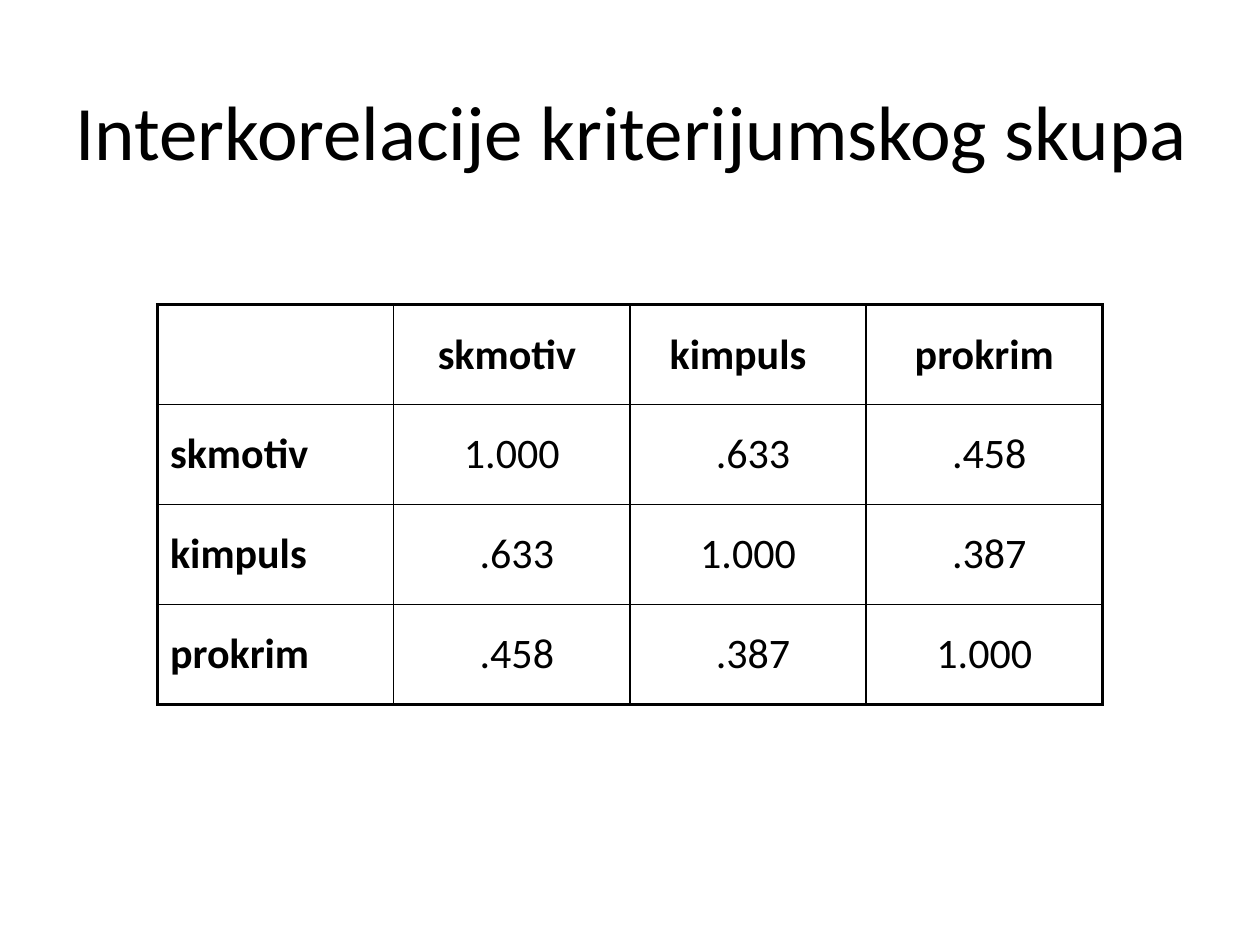
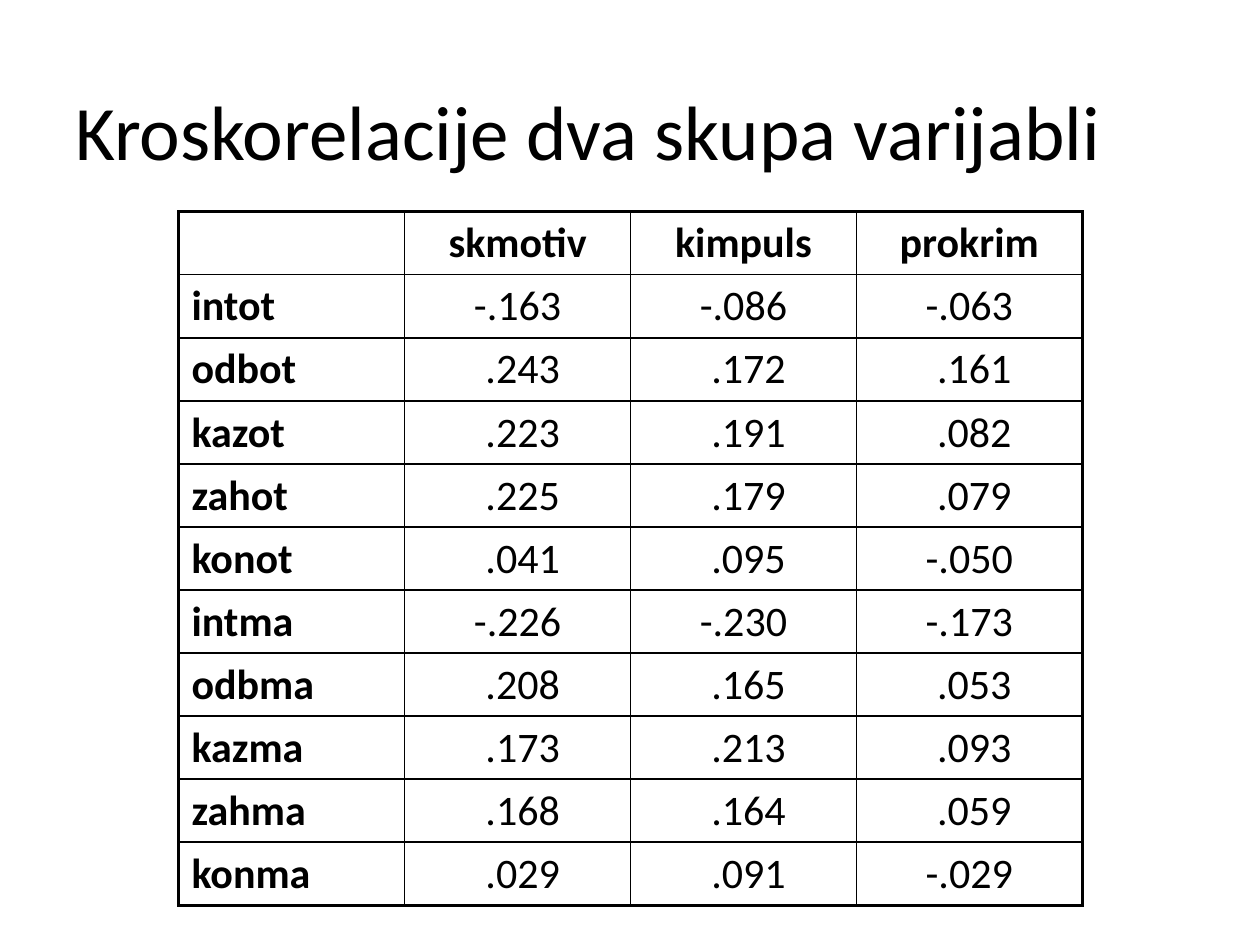
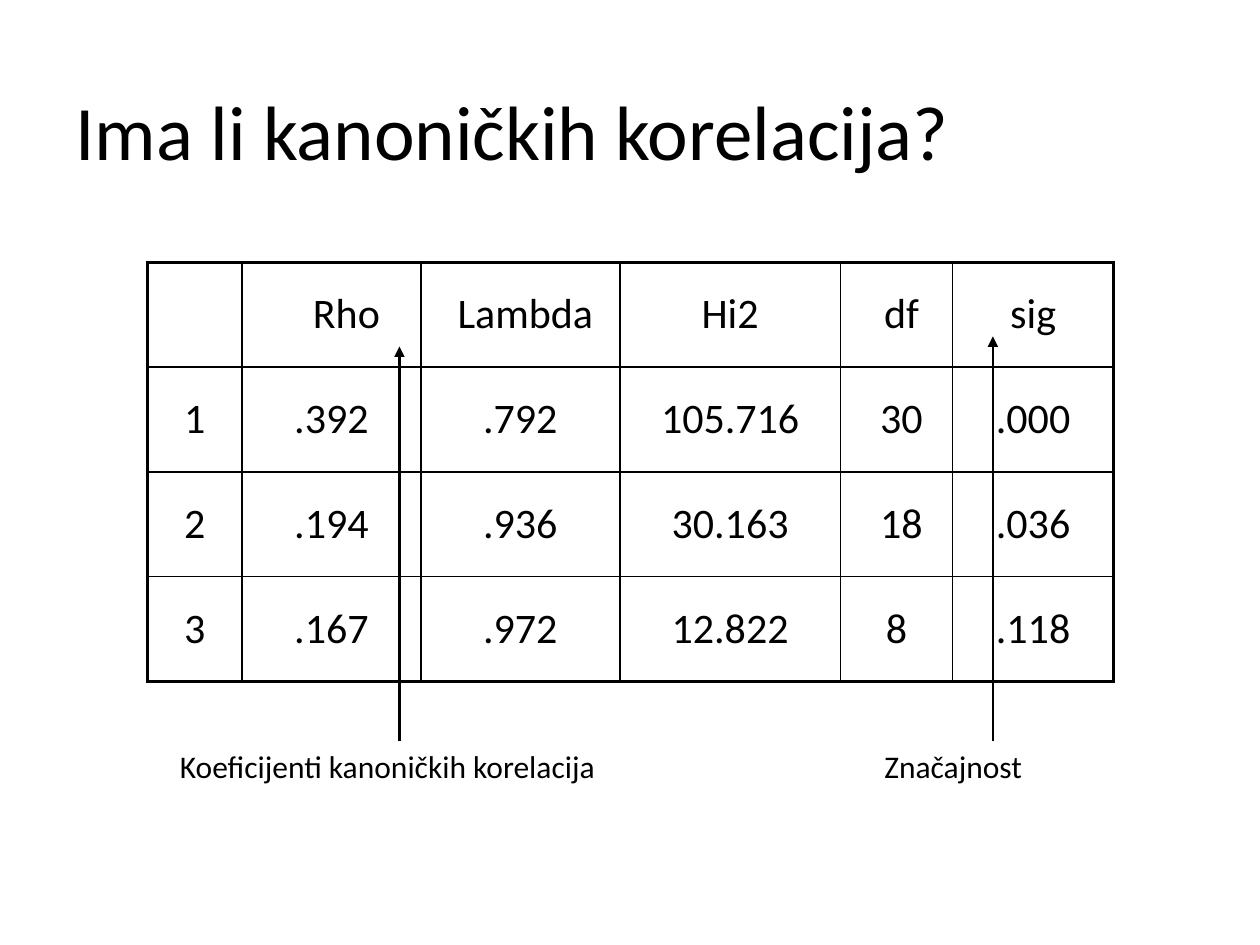
import lxml.etree
import pptx
import pptx.dml.color
import pptx.enum.shapes
import pptx.enum.text
import pptx.oxml.ns
import pptx.util

PX = 9144  # EMU per px, 100 px to the inch
COLORS = {"text": "000000", "line": "000000", "back": "FFFFFF"}
FONT = "Calibri"
ANCHOR = pptx.enum.text.MSO_ANCHOR
ALIGN = pptx.enum.text.PP_ALIGN
FIT = pptx.enum.text.MSO_AUTO_SIZE
MARGIN = 10
SPACE = 8

CRITERIA = ["skmotiv", "kimpuls", "prokrim"]
INTERCORRELATIONS = [
    ["", *CRITERIA],
    ["skmotiv", "1.000", ".633", ".458"],
    ["kimpuls", ".633", "1.000", ".387"],
    ["prokrim", ".458", ".387", "1.000"],
]
CROSSCORRELATIONS = [
    ["", *CRITERIA],
    ["intot", "-.163", "-.086", "-.063"],
    ["odbot", ".243", ".172", ".161"],
    ["kazot", ".223", ".191", ".082"],
    ["zahot", ".225", ".179", ".079"],
    ["konot", ".041", ".095", "-.050"],
    ["intma", "-.226", "-.230", "-.173"],
    ["odbma", ".208", ".165", ".053"],
    ["kazma", ".173", ".213", ".093"],
    ["zahma", ".168", ".164", ".059"],
    ["konma", ".029", ".091", "-.029"],
]
CANONICAL = [
    ["", "Rho", "Lambda", "Hi2", "df", "sig"],
    ["1", ".392", ".792", "105.716", "30", ".000"],
    ["2", ".194", ".936", "30.163", "18", ".036"],
    ["3", ".167", ".972", "12.822", "8", ".118"],
]


def px(n):
    return pptx.util.Emu(round(n * PX))


def rgb(name):
    return pptx.dml.color.RGBColor.from_string(COLORS[name])


def sub(parent, tag, **attrs):
    return lxml.etree.SubElement(parent, pptx.oxml.ns.qn(tag), attrs)


def set_all(obj, values):
    for name, value in values.items():
        setattr(obj, name, value)


class Deck:
    def __init__(self, width, height):
        self.prs = pptx.Presentation()
        set_all(self.prs, {"slide_width": px(width), "slide_height": px(height)})
        self.s = None

    def slide(self, title, title_width=900):
        self.s = self.prs.slides.add_slide(self.prs.slide_layouts[6])
        fill = self.s.background.fill
        fill.solid()
        fill.fore_color.rgb = rgb("back")
        self.text(title, 50, 32, title_width, 151, 44,
                  frame={"vertical_anchor": ANCHOR.MIDDLE}, para={"line_spacing": 0.9})

    def fill_text(self, tf, text, size, bold=False, para=None):
        p = tf.paragraphs[0]
        set_all(p, para or {})
        r = p.add_run()
        r.text = text
        set_all(r.font, {"name": FONT, "size": pptx.util.Pt(size), "bold": bold})
        r.font.color.rgb = rgb("text")

    def text(self, text, x, y, w, h, size, frame=None, para=None):
        tf = self.s.shapes.add_textbox(px(x), px(y), px(w), px(h)).text_frame
        set_all(tf, {"word_wrap": True, **(frame or {})})
        self.fill_text(tf, text, size, para=para)

    def label(self, text, x, y, w):
        self.text(text, x, y, w, 40, 18, frame={"auto_size": FIT.SHAPE_TO_FIT_TEXT})

    def borders(self, cell, widths):
        tc_pr = cell._tc.get_or_add_tcPr()
        for side, width in widths.items():
            ln = sub(tc_pr, f"a:ln{side}", w=str(pptx.util.Pt(width)))
            sub(sub(ln, "a:solidFill"), "a:srgbClr", val=COLORS["line"])

    def table(self, rows, x, y, w, h, cols=None, headings=True, shifts=None):
        """Draw a grid; shifts maps (row, column) to a sideways shift of the text in spaces."""
        n_rows, n_cols = len(rows), len(rows[0])
        cols = cols or [w / n_cols] * n_cols
        table = self.s.shapes.add_table(n_rows, n_cols, px(x), px(y), px(w), px(h)).table
        set_all(table, {"first_row": False, "horz_banding": False})
        for col, width in zip(table.columns, cols):
            col.width = px(width)
        for i, row in enumerate(rows):
            table.rows[i].height = px(h / n_rows)
            for j, text in enumerate(row):
                cell = table.cell(i, j)
                self.borders(cell, {"L": 2 if j == 0 else 1,
                                    "R": 2 if j == n_cols - 1 else 1,
                                    "T": 2 if i == 0 else 1,
                                    "B": 2 if i == n_rows - 1 else 1})
                cell.fill.background()
                # In the correlation tables an unsigned fraction leaves room for a sign
                signless = headings and text.startswith(".")
                shift = SPACE * (shifts or {}).get((i, j), int(signless))
                set_all(cell, {"vertical_anchor": ANCHOR.MIDDLE,
                               "margin_left": px(MARGIN + max(shift, 0)),
                               "margin_right": px(MARGIN + max(-shift, 0))})
                if text:
                    left = headings and j == 0
                    self.fill_text(cell.text_frame, text, 24, headings and 0 in (i, j),
                                   {"alignment": ALIGN.LEFT if left else ALIGN.CENTER})

    def arrow_up(self, x, bottom, top):
        sp = self.s.shapes.add_connector(pptx.enum.shapes.MSO_CONNECTOR.STRAIGHT,
                                         px(x), px(bottom), px(x), px(top))
        sp.line.width = pptx.util.Pt(1.5)
        sp.line.color.rgb = rgb("line")
        sub(sp.get_or_add_ln(), "a:tailEnd", type="triangle")
        sub(sp._element.spPr, "a:effectLst")


def main():
    deck = Deck(1000, 750)

    deck.slide("Interkorelacije kriterijumskog skupa", title_width=925)
    deck.table(INTERCORRELATIONS, 125, 242, 750, 317, shifts={(0, 1): -1, (0, 2): -2})

    deck.slide("Kroskorelacije dva skupa varijabli")
    deck.table(CROSSCORRELATIONS, 142, 168, 717, 506)

    deck.slide("Ima li kanoničkih korelacija?")
    deck.table(CANONICAL, 117, 208, 767, 333, cols=[75, 142, 158, 175, 89, 128], headings=False,
               shifts={(0, 1): 3, (0, 2): 1, (0, 4): 1, (1, 4): 1, (2, 4): 1})
    deck.label("Koeficijenti kanoničkih korelacija", 133, 588, 367)
    deck.label("Značajnost", 692, 588, 192)
    deck.arrow_up(317, 588, 275)
    deck.arrow_up(788, 588, 267)

    deck.prs.save("out.pptx")


if __name__ == "__main__":
    main()
